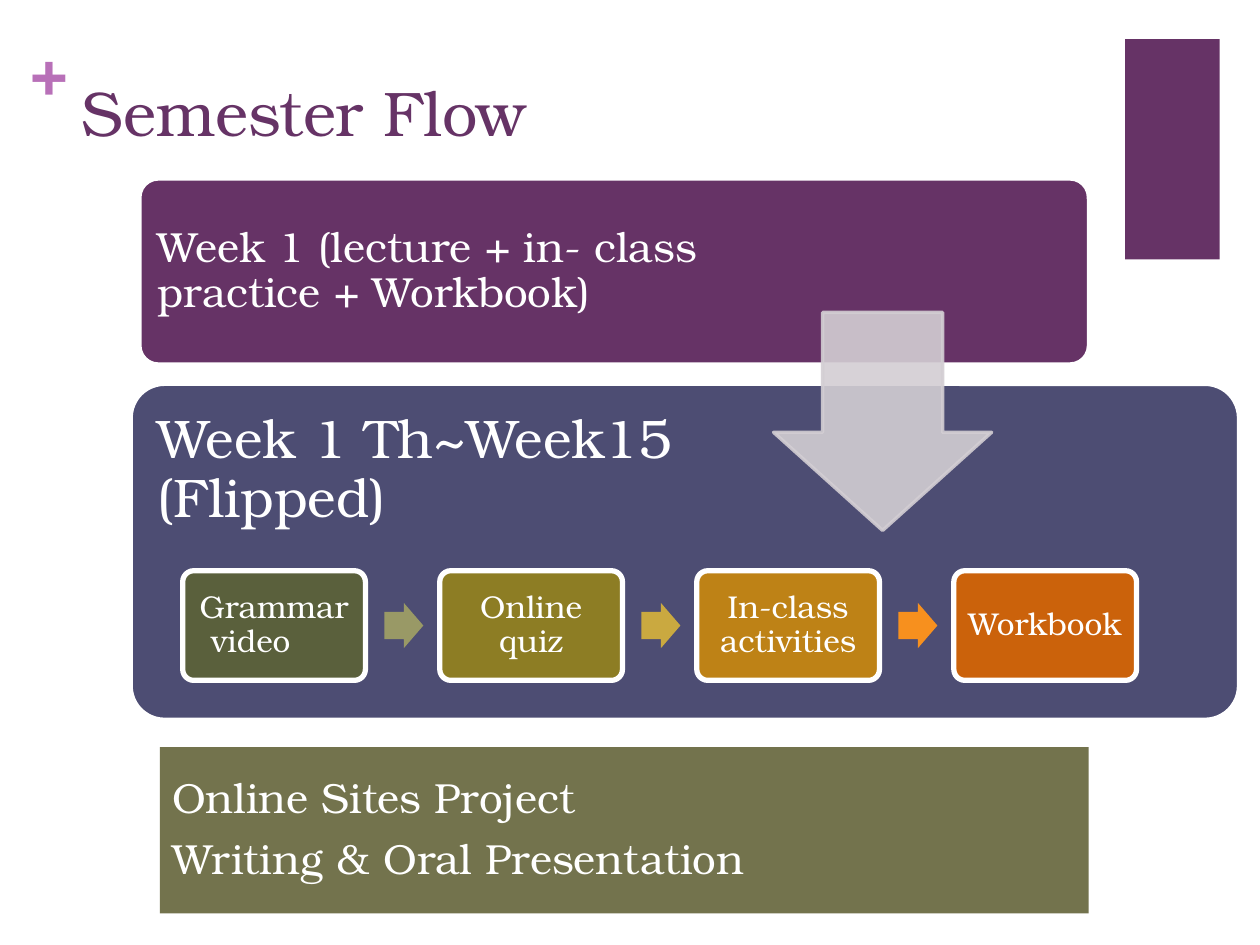
from dataclasses import dataclass
from pptx import Presentation
from pptx.dml.color import RGBColor
from pptx.enum.shapes import MSO_SHAPE
from pptx.enum.text import MSO_ANCHOR, PP_ALIGN
from pptx.oxml.ns import qn
from pptx.oxml.xmlchemy import OxmlElement
from pptx.util import Inches, Pt

RECT, ROUND = MSO_SHAPE.RECTANGLE, MSO_SHAPE.ROUNDED_RECTANGLE
DOWN, RIGHT_ARROW = MSO_SHAPE.DOWN_ARROW, MSO_SHAPE.RIGHT_ARROW
TOP, MIDDLE = MSO_ANCHOR.TOP, MSO_ANCHOR.MIDDLE
LEFT, CENTER = PP_ALIGN.LEFT, PP_ALIGN.CENTER


@dataclass(frozen=True)
class Theme:
    font: str = "TeX Gyre Bonum"
    purple: str = "663366"
    orchid: str = "B870B8"
    indigo: str = "4D4D73"
    olive: str = "73734D"
    mist: str = "D3CED3"
    white: str = "FFFFFF"
    title: int = 36
    phase: int = 31
    body: int = 24
    step: int = 18


THEME = Theme()

# Content
TITLE = "Semester Flow"
# position, shape, fill, outline, text size, anchor, insets (left, top, right, bottom), paragraphs
BANDS = [
    ((1.11, 1.42, 7.53, 1.47), ROUND, THEME.purple, 2, THEME.body, MIDDLE,
     (0.1, 0.1, 2.72, 0.1), ["Week 1 (lecture + in- class practice + Workbook)"]),
    ((1.04, 3.05, 8.79, 2.66), ROUND, THEME.indigo, 2, THEME.phase, TOP,
     (0.13, 0.14, 3.71, 0.13), ["Week 1 Th~Week15 (Flipped)"]),
    ((1.27, 5.93, 7.37, 1.32), RECT, THEME.olive, 0, THEME.body, MIDDLE,
     (0.1, 0.1, 0.1, 0.1), ["Online Sites Project", "Writing & Oral Presentation"]),
]
# text, box colour, colour of the arrow to the next step
STEPS = [
    ("Grammar video\t", "5A603C", "999966"),
    ("Online quiz", "8D7D24", "CAA940"),
    ("In-class activities", "BE8216", "F7901E"),
    ("Workbook", "CB620B", None),
]

# Step row
STEP_LEFT, STEP_TOP, STEP_WIDTH, STEP_HEIGHT = 1.45, 4.53, 1.45, 0.87
STEP_PITCH, ARROW_WIDTH, ARROW_HEIGHT, ARROW_GAP = 2.04, 0.31, 0.36, 0.15


def add_block(page, kind, position, fill, line=0, line_color=THEME.white, adjust=()):
    shape = page.shapes.add_shape(kind, *map(Inches, position))
    shape.shadow.inherit = False
    shape.fill.solid()
    shape.fill.fore_color.rgb = RGBColor.from_string(fill)
    if line:
        shape.line.color.rgb = RGBColor.from_string(line_color)
        shape.line.width = Pt(line)
    else:
        shape.line.fill.background()
    for index, value in enumerate(adjust):
        shape.adjustments[index] = value
    return shape


def write(box, lines, size, color=THEME.white, insets=(0.1, 0.05, 0.1, 0.05),
          anchor=MIDDLE, align=LEFT, bold=False, spacing=0.9, wrap=True):
    frame = box.text_frame
    sides = ("margin_left", "margin_top", "margin_right", "margin_bottom")
    settings = dict(zip(sides, map(Inches, insets)), word_wrap=wrap, vertical_anchor=anchor)
    for name, value in settings.items():
        setattr(frame, name, value)
    para_format = {"alignment": align, "line_spacing": spacing,
                   "space_before": Pt(0), "space_after": Pt(0.35 * size)}
    font_format = {"name": THEME.font, "size": Pt(size), "bold": bold}
    for index, line in enumerate(lines):
        para = frame.add_paragraph() if index else frame.paragraphs[0]
        for name, value in para_format.items():
            setattr(para, name, value)
        span = para.add_run()
        span.text = line
        for name, value in font_format.items():
            setattr(span.font, name, value)
        span.font.color.rgb = RGBColor.from_string(color)


def set_opacity(shape, percent):
    for color in shape.element.spPr.iter(qn("a:srgbClr")):
        alpha = OxmlElement("a:alpha")
        alpha.set("val", str(percent * 1000))
        color.append(alpha)


def main():
    deck = Presentation()
    deck.slide_width, deck.slide_height = Inches(10), Inches(7.5)
    page = deck.slides.add_slide(deck.slide_layouts[5])

    # Corner block, plus sign and title
    add_block(page, RECT, (8.93, 0.31, 0.75, 1.75), THEME.purple)
    plus = page.shapes.add_textbox(*map(Inches, (0.24, 0.25, 0.29, 0.61)))
    write(plus, ["+"], THEME.title, THEME.orchid, (0, 0, 0, 0), TOP,
          bold=True, spacing=1.0, wrap=False)
    title = page.shapes.title
    title.left, title.top, title.width, title.height = map(Inches, (0.55, 0.53, 8.26, 1.22))
    write(title, [TITLE], THEME.title, THEME.purple, anchor=TOP, spacing=1.0)

    # Semester bands
    for position, kind, fill, line, size, anchor, insets, lines in BANDS:
        adjust = (0.1,) if kind == ROUND else ()
        band = add_block(page, kind, position, fill, line, adjust=adjust)
        write(band, lines, size, insets=insets, anchor=anchor)

    # Large arrow from the first band to the second
    arrow = add_block(page, DOWN, (6.14, 2.48, 1.73, 1.73), THEME.mist, 2,
                      THEME.mist, (0.55, 0.45))
    set_opacity(arrow, 90)

    # Weekly steps
    arrow_top = STEP_TOP + (STEP_HEIGHT - ARROW_HEIGHT) / 2
    for index, (text, fill, arrow_fill) in enumerate(STEPS):
        left = STEP_LEFT + index * STEP_PITCH
        step = add_block(page, ROUND, (left, STEP_TOP, STEP_WIDTH, STEP_HEIGHT), fill, 3,
                         adjust=(0.1,))
        write(step, [text], THEME.step, insets=(0.07,) * 4, align=CENTER)
        if arrow_fill:
            arrow_left = left + STEP_WIDTH + ARROW_GAP
            add_block(page, RIGHT_ARROW, (arrow_left, arrow_top, ARROW_WIDTH, ARROW_HEIGHT),
                      arrow_fill, adjust=(0.6, 0.5))

    deck.save("out.pptx")


if __name__ == "__main__":
    main()
